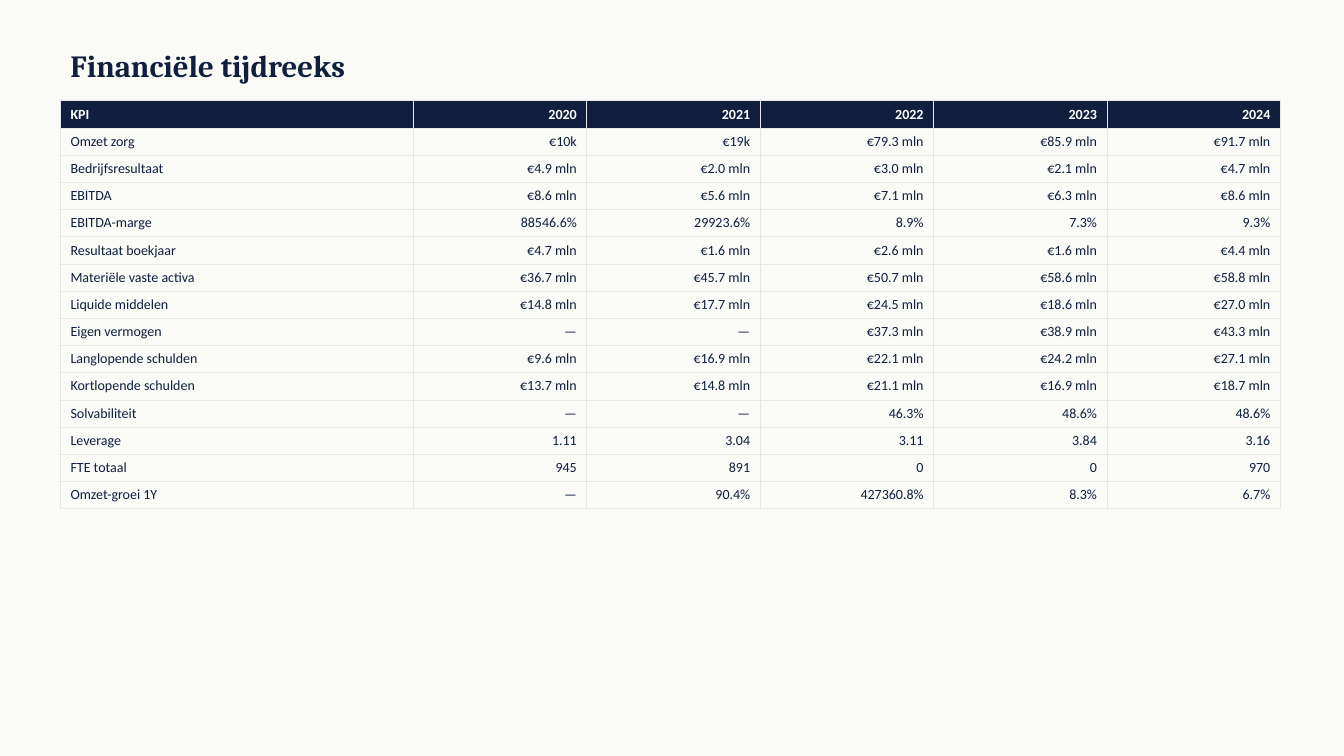
from dataclasses import dataclass

from lxml.etree import SubElement as Sub
from pptx import Presentation
from pptx.dml.color import RGBColor as Rgb
from pptx.enum.text import MSO_ANCHOR as Anchor, PP_ALIGN as Align
from pptx.oxml.ns import qn
from pptx.util import Inches, Pt


@dataclass(frozen=True)
class Theme:
    paper: str = "FAFAF7"
    navy: str = "0F1F3D"
    white: str = "FFFFFF"
    rule: str = "E5E7EB"
    line: float = 0.5
    head: str = "Cambria"
    body: str = "Calibri"
    big: int = 22
    small: int = 10


theme = Theme()


def style(par, face, size, color, bold):
    for run in par.runs:
        font = run.font
        font.name, font.size, font.bold = face, Pt(size), bold
        font.color.rgb = Rgb.from_string(color)


def border(cell):
    props = cell._tc.get_or_add_tcPr()
    for side in ("lnL", "lnR", "lnT", "lnB"):
        edge = Sub(props, qn(f"a:{side}"), w=str(Pt(theme.line)))
        fill = Sub(edge, qn("a:solidFill"))
        Sub(fill, qn("a:srgbClr"), val=theme.rule)


rows = [
    ("KPI", "2020", "2021", "2022", "2023", "2024"),
    ("Omzet zorg", "€10k", "€19k", "€79.3 mln", "€85.9 mln", "€91.7 mln"),
    ("Bedrijfsresultaat", "€4.9 mln", "€2.0 mln", "€3.0 mln", "€2.1 mln", "€4.7 mln"),
    ("EBITDA", "€8.6 mln", "€5.6 mln", "€7.1 mln", "€6.3 mln", "€8.6 mln"),
    ("EBITDA-marge", "88546.6%", "29923.6%", "8.9%", "7.3%", "9.3%"),
    ("Resultaat boekjaar", "€4.7 mln", "€1.6 mln", "€2.6 mln", "€1.6 mln", "€4.4 mln"),
    ("Materiële vaste activa", "€36.7 mln", "€45.7 mln", "€50.7 mln", "€58.6 mln", "€58.8 mln"),
    ("Liquide middelen", "€14.8 mln", "€17.7 mln", "€24.5 mln", "€18.6 mln", "€27.0 mln"),
    ("Eigen vermogen", "—", "—", "€37.3 mln", "€38.9 mln", "€43.3 mln"),
    ("Langlopende schulden", "€9.6 mln", "€16.9 mln", "€22.1 mln", "€24.2 mln", "€27.1 mln"),
    ("Kortlopende schulden", "€13.7 mln", "€14.8 mln", "€21.1 mln", "€16.9 mln", "€18.7 mln"),
    ("Solvabiliteit", "—", "—", "46.3%", "48.6%", "48.6%"),
    ("Leverage", "1.11", "3.04", "3.11", "3.84", "3.16"),
    ("FTE totaal", "945", "891", "0", "0", "970"),
    ("Omzet-groei 1Y", "—", "90.4%", "427360.8%", "8.3%", "6.7%"),
]

deck = Presentation()
deck.slide_width, deck.slide_height = Inches(13.33), Inches(7.5)
slide = deck.slides.add_slide(deck.slide_layouts[6])
back = slide.background.fill
back.solid()
back.fore_color.rgb = Rgb.from_string(theme.paper)

title = slide.shapes.add_textbox(Inches(0.6), Inches(0.4), Inches(12), Inches(0.5)).text_frame
title.word_wrap = True
title.vertical_anchor = Anchor.MIDDLE
title.text = "Financiële tijdreeks"
style(title.paragraphs[0], theme.head, theme.big, theme.navy, True)

high = 0.27
table = slide.shapes.add_table(
    len(rows), len(rows[0]), Inches(0.6), Inches(1), Inches(12.1), Inches(high * len(rows))
).table
table.horz_banding = False
for i, col in enumerate(table.columns):
    col.width = Inches(1.72 if i else 3.5)

for r, row in enumerate(rows):
    table.rows[r].height = Inches(high)
    for c, text in enumerate(row):
        cell = table.cell(r, c)
        border(cell)
        if r == 0:
            cell.fill.solid()
            cell.fill.fore_color.rgb = Rgb.from_string(theme.navy)
        else:
            cell.fill.background()
        par = cell.text_frame.paragraphs[0]
        par.text = text
        par.alignment = Align.RIGHT if c else Align.LEFT
        style(par, theme.body, theme.small, theme.navy if r else theme.white, r == 0)

deck.save("out.pptx")
